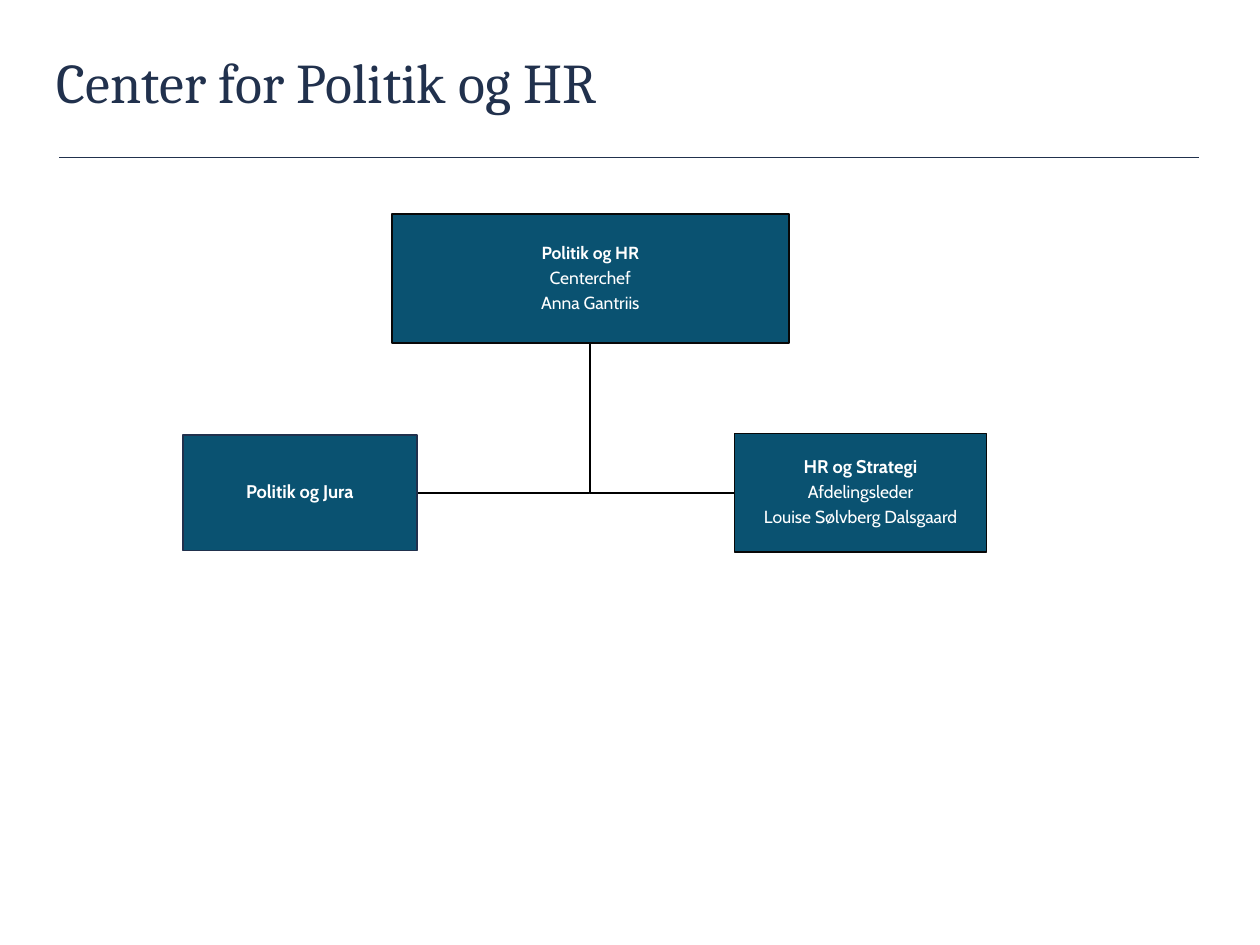
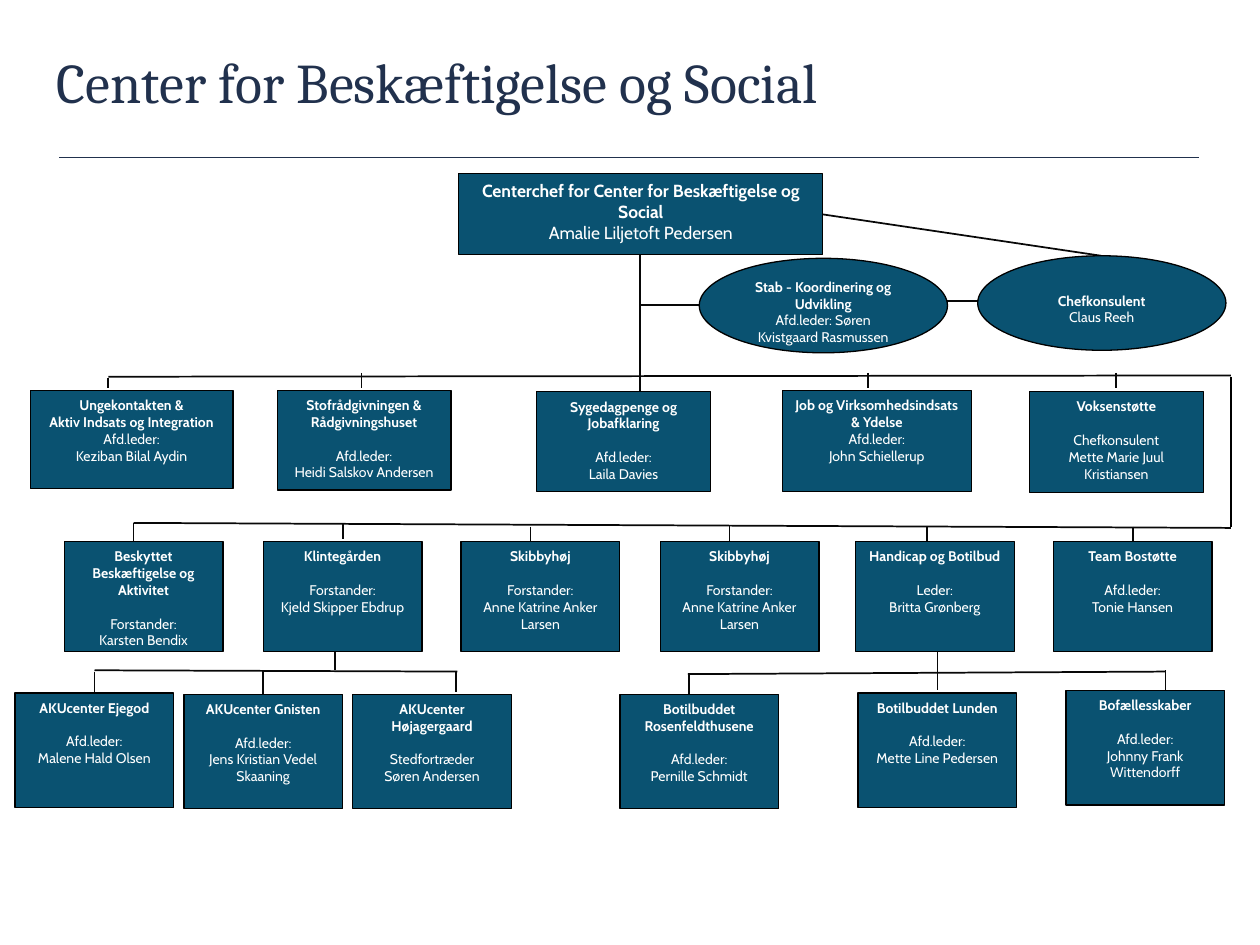
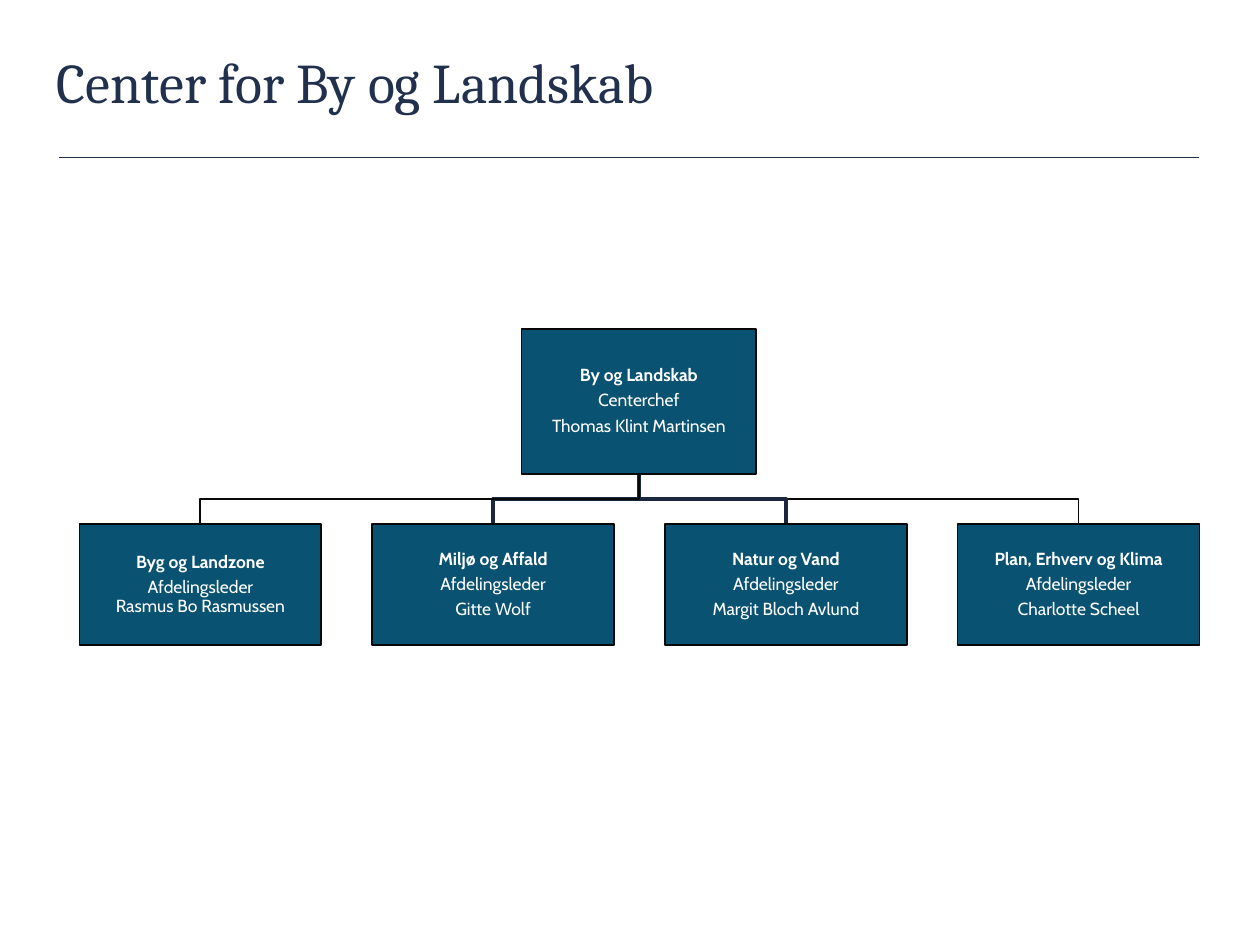
from copy import deepcopy
from dataclasses import dataclass
from typing import NamedTuple, Optional

from lxml import etree
from pptx import Presentation
from pptx.dml.color import RGBColor
from pptx.enum import shapes, text
from pptx.oxml import ns
from pptx.slide import Slide
from pptx.util import Inches, Pt

NAVY = RGBColor(0x21, 0x31, 0x4D)
DARK_NAVY = RGBColor(0x1A, 0x27, 0x3E)
PETROL = RGBColor(0x0A, 0x52, 0x71)
INK = RGBColor(0x08, 0x08, 0x08)
BLACK = RGBColor(0x00, 0x00, 0x00)
WHITE = RGBColor(0xFF, 0xFF, 0xFF)
TITLE_FONT = "Cambria"
BODY_FONT = "Cabin"
BOX = shapes.MSO_SHAPE.RECTANGLE
OVAL = shapes.MSO_SHAPE.OVAL


class Style(NamedTuple):
    size: float
    edge_width: float
    anchor: text.MSO_ANCHOR
    side_inset: float
    top_inset: float
    line_spacing: Optional[float] = None
    space_after: float = 0


ROOMY = Style(10, 1, text.MSO_ANCHOR.MIDDLE, 0.01, 0.01, 0.9, 3.5)
COMPACT = Style(8, 0.75, text.MSO_ANCHOR.TOP, 0.1, 0.05)
COMPACT_HEAD = COMPACT._replace(size=10)
LOWERED = COMPACT._replace(top_inset=0.18)


@dataclass
class Unit:
    left: float
    top: float
    width: float
    height: float
    heading: str
    details: str = ""
    style: Style = COMPACT
    gap: float = 0
    heading_size: Optional[float] = None
    edge: RGBColor = BLACK
    outline: shapes.MSO_SHAPE = BOX


class Link(NamedTuple):
    x1: float
    y1: float
    x2: float
    y2: float
    width: float = 1
    color: RGBColor = INK


class Elbow(NamedTuple):
    points: tuple[tuple[float, float], ...]
    width: float = 1
    color: RGBColor = INK


def draw_link(slide: Slide, link: Link) -> None:
    connector = slide.shapes.add_connector(
        shapes.MSO_CONNECTOR.STRAIGHT,
        Inches(link.x1), Inches(link.y1), Inches(link.x2), Inches(link.y2),
    )
    connector.line.color.rgb = link.color
    connector.line.width = Pt(link.width)
    etree.SubElement(connector._element.spPr, ns.qn("a:effectLst"))


def draw_elbow(slide: Slide, elbow: Elbow) -> None:
    start, *rest = [(Inches(x), Inches(y)) for x, y in elbow.points]
    builder = slide.shapes.build_freeform(*start)
    builder.add_line_segments(rest, close=False)
    branch = builder.convert_to_shape()
    branch.shadow.inherit = False
    branch.fill.background()
    branch.line.color.rgb = elbow.color
    branch.line.width = Pt(elbow.width)


def format_paragraph(paragraph, style: Style, size: float, bold: bool) -> None:
    paragraph.alignment = text.PP_ALIGN.CENTER
    paragraph.space_after = Pt(style.space_after)
    if style.line_spacing:
        paragraph.line_spacing = style.line_spacing
    for run in paragraph.runs:
        run.font.name = BODY_FONT
        run.font.size = Pt(size)
        run.font.bold = bold
        run.font.color.rgb = WHITE
    for line_break in paragraph._p.findall(ns.qn("a:br")):
        line_break.append(deepcopy(paragraph.runs[0]._r.rPr))


def draw_unit(slide: Slide, unit: Unit) -> None:
    style = unit.style
    box = slide.shapes.add_shape(
        unit.outline,
        Inches(unit.left), Inches(unit.top), Inches(unit.width), Inches(unit.height),
    )
    box.shadow.inherit = False
    box.fill.solid()
    box.fill.fore_color.rgb = PETROL
    box.line.color.rgb = unit.edge
    box.line.width = Pt(style.edge_width)
    frame = box.text_frame
    frame.word_wrap = True
    frame.vertical_anchor = style.anchor
    frame.margin_left = frame.margin_right = Inches(style.side_inset)
    frame.margin_top = Inches(style.top_inset)
    frame.margin_bottom = Inches(min(style.top_inset, 0.05))
    frame.text = "\n".join(filter(None, (unit.heading, unit.details)))
    heading_lines = unit.heading.count("\n") + 1
    for index, paragraph in enumerate(frame.paragraphs):
        bold = index < heading_lines
        size = unit.heading_size if bold and unit.heading_size else style.size
        format_paragraph(paragraph, style, size, bold)
        if index == heading_lines and unit.gap:
            paragraph.space_before = Pt(unit.gap)


def add_center_slide(
    deck, title: str, links: list[Link], elbows: list[Elbow], units: list[Unit]
) -> None:
    slide = deck.slides.add_slide(deck.slide_layouts[6])
    heading = slide.shapes.add_textbox(Inches(0.45), Inches(0.38), Inches(9.07), Inches(0.85))
    frame = heading.text_frame
    frame.word_wrap = True
    frame.margin_left = frame.margin_right = frame.margin_top = frame.margin_bottom = 0
    frame.text = title
    font = frame.paragraphs[0].runs[0].font
    font.name = TITLE_FONT
    font.size = Pt(32)
    font.color.rgb = NAVY
    draw_link(slide, Link(0.47, 1.25, 9.52, 1.25, 0.75, NAVY))
    for elbow in elbows:
        draw_elbow(slide, elbow)
    for link in links:
        draw_link(slide, link)
    for unit in units:
        draw_unit(slide, unit)


def add_politics(deck) -> None:
    elbows = [
        Elbow(((4.68, 2.73), (4.68, 3.91), (x, 3.91)), color=BLACK) for x in (5.83, 3.31)
    ]
    units = [
        Unit(3.11, 1.7, 3.15, 1.02, "Politik og HR", "Centerchef\nAnna Gantriis", ROOMY, edge=INK),
        Unit(1.45, 3.45, 1.86, 0.92, "Politik og Jura", style=ROOMY,
             heading_size=10.5, edge=NAVY),
        Unit(5.83, 3.44, 2, 0.94, "HR og Strategi",
             "Afdelingsleder\nLouise Sølvberg Dalsgaard", ROOMY, heading_size=10.5, edge=INK),
    ]
    add_center_slide(deck, "Center for Politik og HR", [], elbows, units)


def add_employment(deck) -> None:
    blank_line = 9.6
    leadership = [
        Unit(3.64, 1.38, 2.89, 0.64, "Centerchef for Center for Beskæftigelse og Social",
             "Amalie Liljetoft Pedersen", COMPACT_HEAD),
        Unit(5.55, 2.05, 1.97, 0.75, "Stab - Koordinering og Udvikling",
             "Afd.leder: Søren Kvistgaard Rasmussen", outline=OVAL),
        Unit(7.76, 2.03, 1.97, 0.75, "Chefkonsulent", "Claus Reeh", LOWERED, outline=OVAL),
    ]
    departments = [
        Unit(0.24, 3.1, 1.61, 0.78, "Ungekontakten &\nAktiv Indsats og Integration",
             "Afd.leder:\nKeziban Bilal Aydin"),
        Unit(2.2, 3.1, 1.38, 0.79, "Stofrådgivningen & Rådgivningshuset",
             "Afd.leder:\nHeidi Salskov Andersen", gap=blank_line),
        Unit(4.26, 3.11, 1.38, 0.79, "Sygedagpenge og Jobafklaring",
             "Afd.leder:\nLaila Davies", gap=blank_line),
        Unit(6.21, 3.1, 1.5, 0.8, "Job og Virksomhedsindsats & Ydelse",
             "Afd.leder:\nJohn Schiellerup"),
        Unit(8.17, 3.11, 1.38, 0.8, "Voksenstøtte",
             "Chefkonsulent\nMette Marie Juul Kristiansen", gap=blank_line),
    ]
    institutions = [
        Unit(left, 4.3, 1.26, 0.87, heading, details, gap=blank_line)
        for left, heading, details in (
            (0.51, "Beskyttet Beskæftigelse og Aktivitet", "Forstander:\nKarsten Bendix"),
            (2.09, "Klintegården", "Forstander:\nKjeld Skipper Ebdrup"),
            (3.66, "Skibbyhøj", "Forstander:\nAnne Katrine Anker Larsen"),
            (5.24, "Skibbyhøj", "Forstander:\nAnne Katrine Anker Larsen"),
            (6.81 - 0.02, "Handicap og Botilbud", "Leder:\nBritta Grønberg"),
            (8.36, "Team Bostøtte", "Afd.leder:\nTonie Hansen"),
        )
    ]
    homes = [
        Unit(left, top, 1.26, 0.91, heading, details, gap=blank_line)
        for left, top, heading, details in (
            (0.12, 5.5, "AKUcenter Ejegod", "Afd.leder:\nMalene Hald Olsen"),
            (1.46, 5.51, "AKUcenter Gnisten", "Afd.leder:\nJens Kristian Vedel Skaaning"),
            (2.8, 5.51, "AKUcenter Højagergaard", "Stedfortræder\nSøren Andersen"),
            (4.92, 5.51, "Botilbuddet Rosenfeldthusene", "Afd.leder:\nPernille Schmidt"),
            (6.81, 5.5, "Botilbuddet Lunden", "Afd.leder:\nMette Line Pedersen"),
            (8.46, 5.48, "Bofællesskaber", "Afd.leder:\nJohnny Frank Wittendorff"),
        )
    ]
    buses = [
        Link(0.86, 2.99, 9.77, 2.98),
        Link(9.77, 2.99, 9.77, 4.18, 1.5, BLACK),
        Link(1.06, 4.15, 9.77, 4.19),
        Link(0.75, 5.32, 3.63, 5.33),
        Link(5.46, 5.35, 9.25, 5.33),
        Link(5.08, 2.42, 5.55, 2.42),
        Link(7.52, 2.39, 7.76, 2.39),
        Link(6.52, 1.7, 8.74, 2.03),
    ]
    drops = [
        Link(x, top, x, bottom)
        for x, top, bottom in (
            (5.08, 2.02, 2.96), (5.08, 2.96, 3.12),
            (0.86, 3, 3.08), (2.87, 2.96, 3.08), (6.89, 2.96, 3.08), (8.86, 2.96, 3.08),
            (1.06, 4.15, 4.3), (2.72, 4.16, 4.28), (4.21, 4.18, 4.3),
            (5.79, 4.17, 4.29), (7.36, 4.18, 4.3), (8.99, 4.18, 4.3),
            (2.66, 5.17, 5.32), (0.75, 5.33, 5.49), (2.09, 5.32, 5.51), (3.62, 5.33, 5.49),
            (7.44, 5.17, 5.32), (5.47, 5.35, 5.51), (7.44, 5.32, 5.48), (9.25, 5.32, 5.48),
        )
    ]
    add_center_slide(
        deck, "Center for Beskæftigelse og Social", buses + drops, [],
        leadership + departments + institutions + homes,
    )


def add_landscape(deck) -> None:
    trunk, width, pitch = 5.07, 1.92, 2.3233
    departments = (
        ("Byg og Landzone", "Afdelingsleder\vRasmus Bo Rasmussen"),
        ("Miljø og Affald", "Afdelingsleder\nGitte Wolf"),
        ("Natur og Vand", "Afdelingsleder\nMargit Bloch Avlund"),
        ("Plan, Erhverv og Klima", "Afdelingsleder\nCharlotte Scheel"),
    )
    lefts = [0.63 + pitch * index for index in range(len(departments))]
    units = [
        Unit(4.14, 2.61, 1.86, 1.15, "By og Landskab",
             "Centerchef\nThomas Klint Martinsen", ROOMY, edge=INK)
    ] + [
        Unit(left, 4.16, width, 0.96, heading, details, ROOMY, edge=INK)
        for left, (heading, details) in zip(lefts, departments)
    ]
    strokes = ((1, INK), (2, DARK_NAVY), (2, DARK_NAVY), (1, INK))
    elbows = [
        Elbow(((trunk, 3.76), (trunk, 3.96), (left + width / 2, 3.96), (left + width / 2, 4.16)),
              *stroke)
        for left, stroke in reversed(list(zip(lefts, strokes)))
    ]
    add_center_slide(deck, "Center for By og Landskab", [], elbows, units)


def main() -> None:
    deck = Presentation()
    deck.slide_width = Inches(10)
    deck.slide_height = Inches(7.5)
    add_politics(deck)
    add_employment(deck)
    add_landscape(deck)
    deck.save("out.pptx")


if __name__ == "__main__":
    main()
